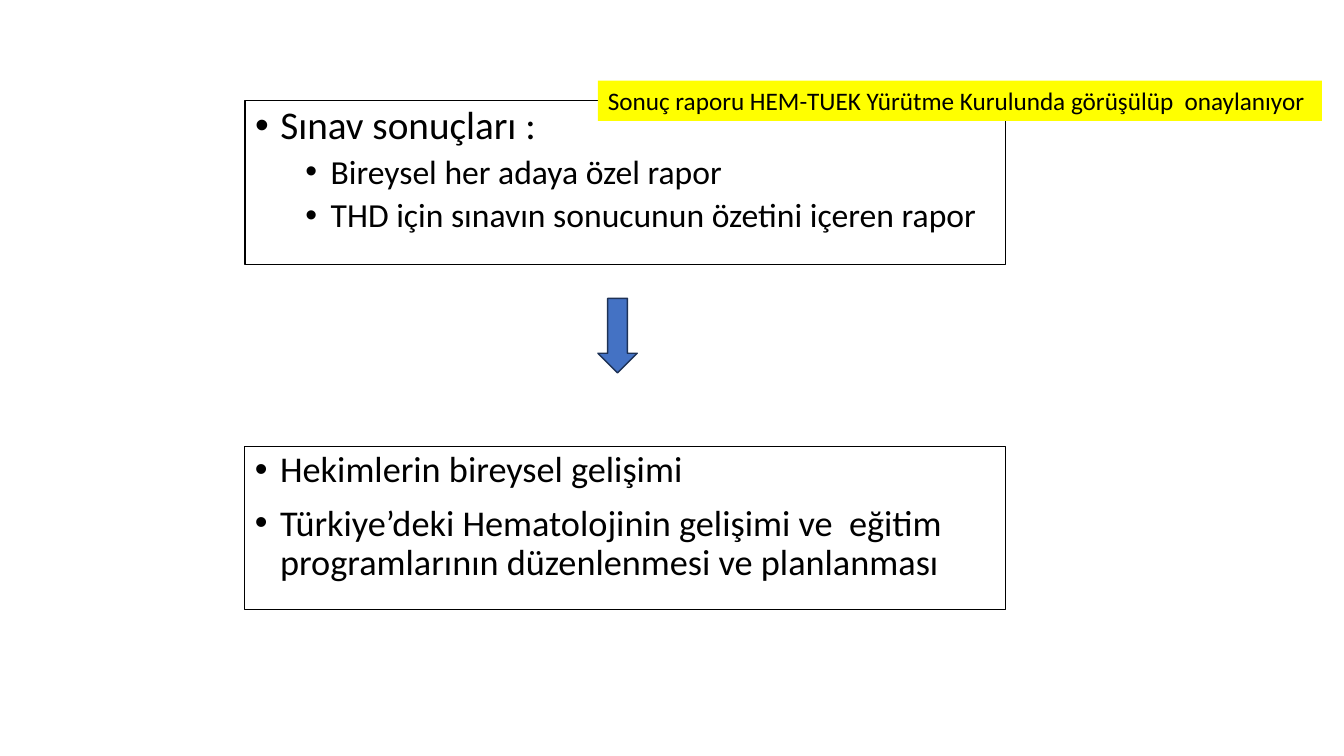
from lxml.etree import SubElement
from pptx import Presentation
from pptx.dml.color import RGBColor
from pptx.enum.shapes import MSO_SHAPE
from pptx.enum.text import MSO_ANCHOR, MSO_AUTO_SIZE, PP_ALIGN
from pptx.oxml.ns import qn
from pptx.util import Inches, Pt

BLACK = RGBColor(0x00, 0x00, 0x00)
YELLOW = RGBColor(0xFF, 0xFF, 0x00)
BLUE = RGBColor(0x44, 0x72, 0xC4)
NAVY = RGBColor(0x1E, 0x32, 0x56)

BOX_LEFT, BOX_WIDTH, BOX_HEIGHT = Inches(2.43), Inches(7.54), Inches(1.62)
RESULTS_TOP, GOALS_TOP = Inches(1), Inches(4.43)
MIDDLE_LEFT = Inches(5.93)
HANGING = Inches(0.25)
LEVEL_STEP = Inches(0.5)

RESULTS = [
    ("Sınav sonuçları :", 0, 28),
    ("Bireysel her adaya özel rapor", 1, 24),
    ("THD için sınavın sonucunun özetini içeren rapor", 1, 24),
]
GOALS = [
    ("Hekimlerin bireysel gelişimi", 0, 25.9),
    ("Türkiye’deki Hematolojinin gelişimi ve  eğitim programlarının "
     "düzenlenmesi ve planlanması", 0, 25.9),
]


def write_line(paragraph, text, size):
    paragraph.alignment = PP_ALIGN.LEFT
    run = paragraph.add_run()
    run.text = text
    for attribute, value in {"name": "Calibri", "size": Pt(size)}.items():
        setattr(run.font, attribute, value)
    run.font.color.rgb = BLACK


def fill_bullet_box(box, lines):
    box.line.color.rgb = BLACK
    box.line.width = Pt(0.75)
    frame = box.text_frame
    frame.word_wrap = True
    frame.auto_size = MSO_AUTO_SIZE.NONE
    frame.vertical_anchor = MSO_ANCHOR.TOP
    for number, (text, level, size) in enumerate(lines):
        paragraph = frame.add_paragraph() if number else frame.paragraphs[0]
        spacing = {
            "level": level,
            "line_spacing": 0.9,
            "space_before": Pt((5 if level else 10) if number else 0),
            "space_after": Pt(0),
        }
        for attribute, value in spacing.items():
            setattr(paragraph, attribute, value)
        properties = paragraph._p.get_or_add_pPr()
        properties.set("marL", str(HANGING + level * LEVEL_STEP))
        properties.set("indent", str(-HANGING))
        SubElement(properties, qn("a:buFont"), typeface="Arial")
        SubElement(properties, qn("a:buChar"), char="•")
        write_line(paragraph, text, size)


presentation = Presentation()
presentation.slide_width = Inches(13.33)
presentation.slide_height = Inches(7.5)
slide = presentation.slides.add_slide(presentation.slide_layouts[1])
shapes = slide.shapes
empty_title = shapes.title.element
empty_title.getparent().remove(empty_title)

# Exam results
results = slide.placeholders[1]
results_place = {"left": BOX_LEFT, "top": RESULTS_TOP,
                 "width": BOX_WIDTH, "height": BOX_HEIGHT}
for attribute, value in results_place.items():
    setattr(results, attribute, value)
fill_bullet_box(results, RESULTS)

# Step from results to goals
arrow = shapes.add_shape(MSO_SHAPE.DOWN_ARROW, MIDDLE_LEFT, Inches(2.96),
                         Inches(0.39), Inches(0.74))
arrow.shadow.inherit = False
arrow.fill.solid()
arrow.fill.fore_color.rgb = BLUE
arrow.line.color.rgb = NAVY
arrow.line.width = Pt(1)

# What the results serve
goals = shapes.add_textbox(BOX_LEFT, GOALS_TOP, BOX_WIDTH, BOX_HEIGHT)
fill_bullet_box(goals, GOALS)

# Approval note
approval = shapes.add_textbox(MIDDLE_LEFT, Inches(0.8), Inches(7.18), Inches(0.4))
approval.fill.solid()
approval.fill.fore_color.rgb = YELLOW
approval.text_frame.word_wrap = True
approval.text_frame.auto_size = MSO_AUTO_SIZE.SHAPE_TO_FIT_TEXT
write_line(approval.text_frame.paragraphs[0],
           "Sonuç raporu HEM-TUEK Yürütme Kurulunda görüşülüp  onaylanıyor", 18)

presentation.save("out.pptx")
